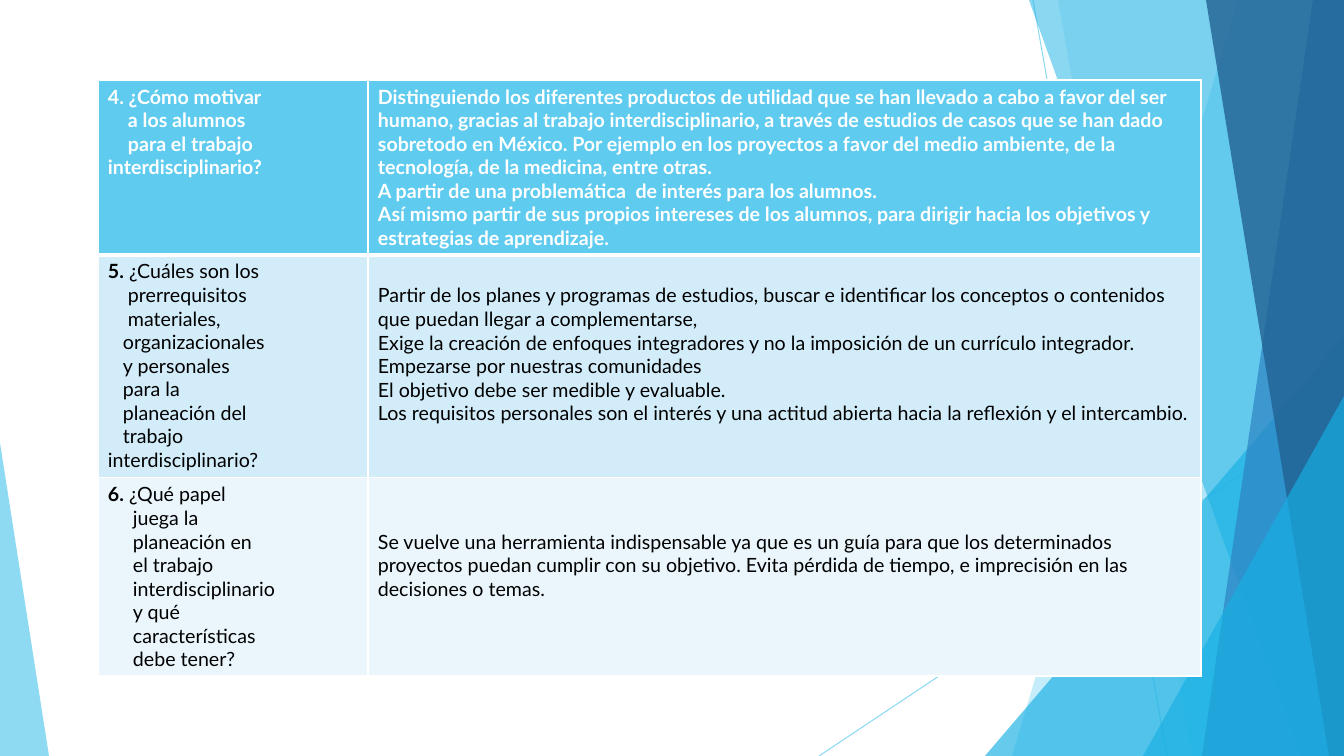
from lxml.etree import SubElement
from pptx import Presentation
from pptx.dml.color import RGBColor as RGB
from pptx.enum.shapes import MSO_CONNECTOR as CONNECTOR, MSO_SHAPE as SHAPE
from pptx.oxml.ns import qn
from pptx.util import Pt

SCALE = 914400 / 100.8
COLORS = {"sky": "5FCBEF", "cyan": "17B0E4", "blue": "2E83C3", "navy": "226292",
          "band_dark": "D2ECF9", "band_light": "EAF6FC", "white": "FFFFFF", "black": "000000"}


def px(*lengths):
    values = [round(length * SCALE) for length in lengths]
    return values if len(values) > 1 else values[0]


def paint(fill, color, opacity):
    fill.solid()
    fill.fore_color.rgb = RGB.from_string(COLORS[color])
    for color_node in fill._xPr.iter(qn("a:srgbClr")):
        SubElement(color_node, qn("a:alpha"), val=str(opacity * 1000))


presentation = Presentation()
presentation.slide_width, presentation.slide_height = px(1344, 756)
slide = presentation.slides.add_slide(presentation.slide_layouts[6])
shapes = slide.shapes

# Thin crossing lines
for ends in [(1033, 0, 1167, 756), (1344, 406, 819, 756)]:
    connector = shapes.add_connector(CONNECTOR.STRAIGHT, *px(*ends))
    connector.line.width = Pt(0.75)
    paint(connector.line.fill, "sky", 70)
    SubElement(connector._element.spPr, qn("a:effectLst"))

# Facets: bands as (top x, bottom x), triangles as (box, apex)
FACETS = [
    ("band", (1238, 1012), "sky", 36),
    ("band", (1058, 1192), "sky", 20),
    ("triangle", ((985, 336, 359, 420), 1), "cyan", 66),
    ("band", (1029, 1301), "cyan", 50),
    ("band", (1313, 1202), "blue", 70),
    ("band", (1206, 1329), "navy", 80),
    ("triangle", ((1143, 396, 201, 360), 1), "cyan", 66),
    ("triangle", ((0, 443, 49, 313), 0), "sky", 70),
]
for kind, geometry, color, opacity in FACETS:
    if kind == "band":
        top_x, bottom_x = geometry
        builder = shapes.build_freeform(top_x, 0, scale=SCALE)
        builder.add_line_segments([(1344, 0), (1344, 756), (bottom_x, 756)], close=True)
        shape = builder.convert_to_shape()
    else:
        box, apex = geometry
        shape = shapes.add_shape(SHAPE.ISOSCELES_TRIANGLE, *px(*box))
        shape.adjustments[0] = apex
    shape.shadow.inherit = False
    shape.line.fill.background()
    paint(shape.fill, color, opacity)

# Table content: each line is (indent, bold text, plain text)
QUESTIONS = [
    [(0, "4. ¿Cómo motivar", ""), (20, "a los alumnos", ""), (20, "para el trabajo", ""),
     (0, "interdisciplinario?", "")],
    [(0, "5.", " ¿Cuáles son los"), (20, "", "prerrequisitos"), (20, "", "materiales,"),
     (15, "", "organizacionales"), (15, "", "y personales"), (15, "", "para la"),
     (15, "", "planeación del"), (15, "", "trabajo"), (0, "", "interdisciplinario?")],
    [(0, "6.", " ¿Qué papel"), (25, "", "juega la"), (25, "", "planeación en"),
     (25, "", "el trabajo"), (25, "", "interdisciplinario"), (25, "", "y qué"),
     (25, "", "características"), (25, "", "debe tener?")],
]
ANSWERS = [
    [(0, "Distinguiendo los diferentes productos de utilidad que se han llevado a cabo a favor "
         "del ser humano, gracias al trabajo interdisciplinario, a través de estudios de casos "
         "que se han dado sobretodo en México. Por ejemplo en los proyectos a favor del medio "
         "ambiente, de la tecnología, de la medicina, entre otras.", ""),
     (0, "A partir de una problemática  de interés para los alumnos.", ""),
     (0, "Así mismo partir de sus propios intereses de los alumnos, para dirigir hacia los "
         "objetivos y estrategias de aprendizaje.", "")],
    [(0, "", "Partir de los planes y programas de estudios, buscar e identificar los conceptos o "
             "contenidos que puedan llegar a complementarse,"),
     (0, "", "Exige la creación de enfoques integradores y no la imposición de un currículo "
             "integrador."),
     (0, "", "Empezarse por nuestras comunidades"),
     (0, "", "El objetivo debe ser medible y evaluable."),
     (0, "", "Los requisitos personales son el interés y una actitud abierta hacia la reflexión "
             "y el intercambio.")],
    [(0, "", "Se vuelve una herramienta indispensable ya que es un guía para que los "
             "determinados proyectos puedan cumplir con su objetivo. Evita pérdida de tiempo, e "
             "imprecisión en las decisiones o temas.")],
]
ROWS = [  # height, fill, text colour, top margin of the answer
    (173, "sky", "white", 5),
    (223, "band_dark", "black", 29),
    (198, "band_light", "black", 52),
]

# Table grid
table = shapes.add_table(3, 2, *px(98, 80, 1103, 594)).table
table.horz_banding = False
for column, width in zip(table.columns, (270, 833)):
    column.width = px(width)

# Cells
for row_index, (height, fill, text_color, answer_top) in enumerate(ROWS):
    table.rows[row_index].height = px(height)
    for column_index, (content, top) in enumerate([(QUESTIONS, 5), (ANSWERS, answer_top)]):
        cell = table.cell(row_index, column_index)
        cell.margin_left, cell.margin_right, cell.margin_top, cell.margin_bottom = px(10, 10, top, 5)
        properties = cell._tc.get_or_add_tcPr()
        for side in "LRTB":
            thick = (row_index, side) in [(0, "B"), (1, "T")]
            border = SubElement(properties, qn(f"a:ln{side}"), w=str(Pt(3 if thick else 1)))
            border_fill = SubElement(border, qn("a:solidFill"))
            SubElement(border_fill, qn("a:srgbClr"), val=COLORS["white"])
        paint(cell.fill, fill, 100)
        frame = cell.text_frame
        for line_index, (indent, bold_text, plain_text) in enumerate(content[row_index]):
            paragraph = frame.add_paragraph() if line_index else frame.paragraphs[0]
            paragraph._p.get_or_add_pPr().set("marL", str(px(indent)))
            for text, bold in [(bold_text, True), (plain_text, False)]:
                if text:
                    run = paragraph.add_run()
                    run.text = text
                    for name, value in {"name": "Lato", "size": Pt(14), "bold": bold}.items():
                        setattr(run.font, name, value)
                    run.font.color.rgb = RGB.from_string(COLORS[text_color])

presentation.save("out.pptx")
